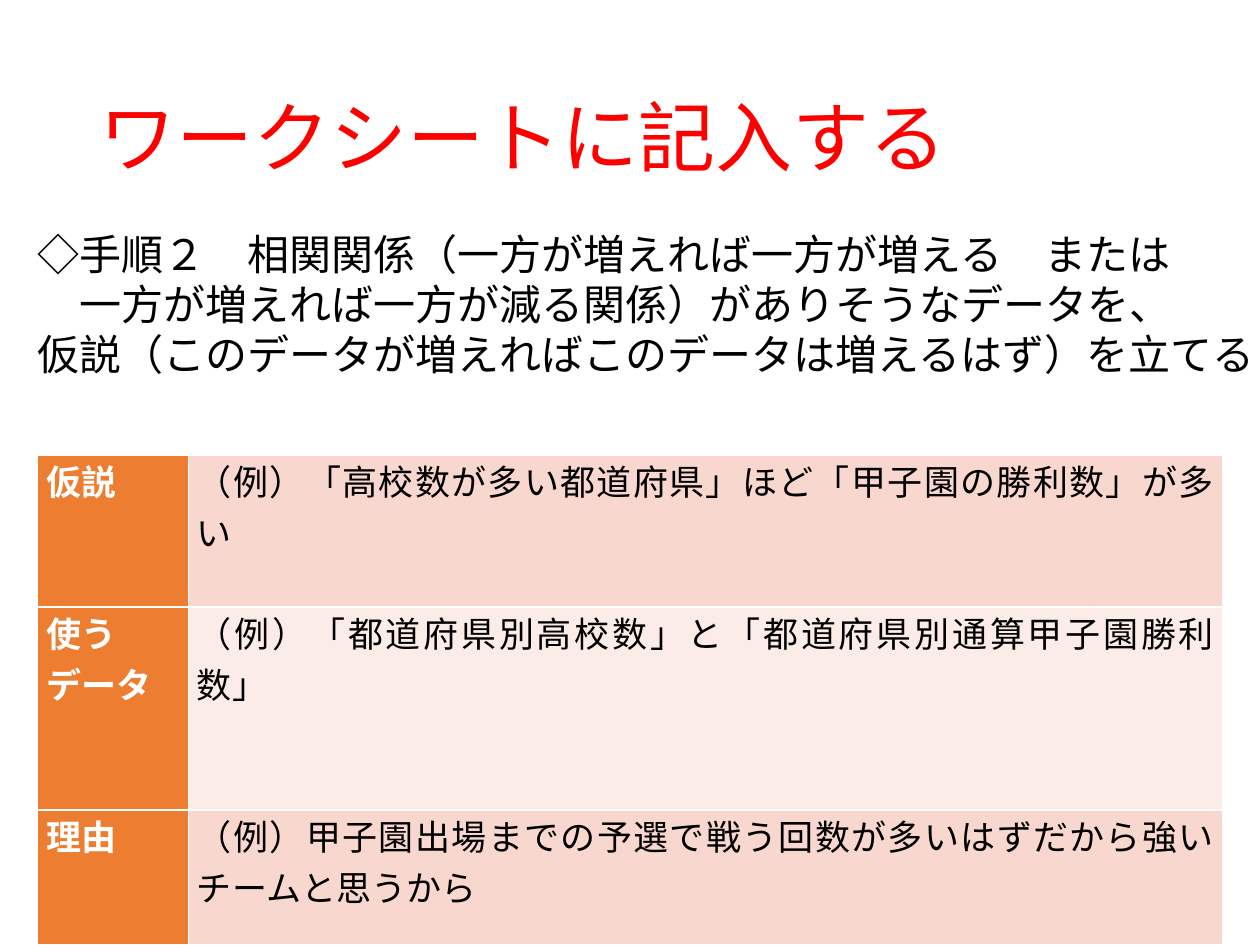
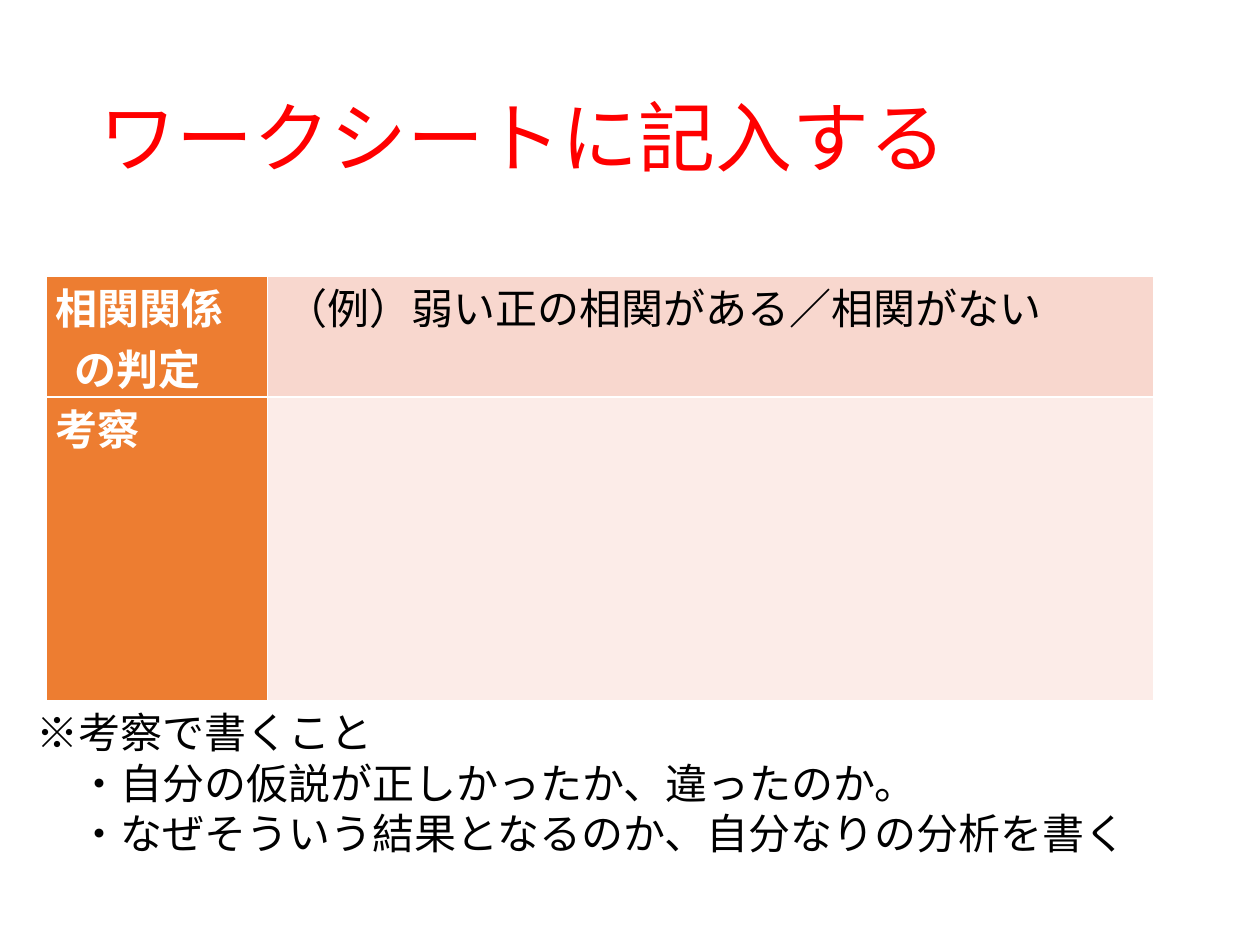
from dataclasses import dataclass
from lxml.etree import SubElement
from pptx import Presentation
from pptx.dml.color import RGBColor
from pptx.enum.text import MSO_ANCHOR, PP_ALIGN
from pptx.oxml.ns import qn
from pptx.util import Pt


@dataclass(frozen=True)
class Theme:
    font: str = "Noto Sans CJK JP"
    title_color: str = "FF0000"
    text_color: str = "000000"
    label_color: str = "FFFFFF"
    border_color: str = "FFFFFF"
    label_fill: str = "ED7D31"
    band_fills: tuple = ("F8D7CE", "FCECE8")
    title_size: int = 44
    body_size: int = 24
    small_size: int = 20
    body_spacing: float = 28.8


@dataclass(frozen=True)
class Line:
    text: str
    indent: float = 0


THEME = Theme()


def style_paragraph(paragraph, size, color, bold=False, indent=0):
    font = paragraph.font
    font.size = Pt(size)
    font.bold = bold
    font.color.rgb = RGBColor.from_string(color)
    font.name = THEME.font
    properties = paragraph._p.get_or_add_pPr()
    SubElement(properties.find(qn("a:defRPr")), qn("a:ea"), typeface=THEME.font)
    properties.set("marL", "0")
    properties.set("indent", str(Pt(indent)))


def add_lines(frame, lines, size, color, bold=False):
    """Write one paragraph per line and return the paragraphs."""
    for number, line in enumerate(lines):
        paragraph = frame.add_paragraph() if number else frame.paragraphs[0]
        paragraph.text = line.text
        style_paragraph(paragraph, size, color, bold, line.indent)
    return frame.paragraphs


def add_text_box(slide, left, top, width, height):
    box = slide.shapes.add_textbox(Pt(left), Pt(top), Pt(width), Pt(height))
    box.text_frame.word_wrap = True
    return box.text_frame


def add_title(slide, text):
    frame = add_text_box(slide, 49.7, 28.8, 620.6, 104.4)
    frame.vertical_anchor = MSO_ANCHOR.MIDDLE
    title, = add_lines(frame, [Line(text)], THEME.title_size, THEME.title_color)
    title.line_spacing = 0.9


def add_explanation(slide, left, top, width, indent, texts):
    frame = add_text_box(slide, left, top, width, 94.3)
    frame.margin_top = Pt(5)
    lines = [Line(text, indent) for text in texts]
    for paragraph in add_lines(frame, lines, THEME.body_size, THEME.text_color):
        paragraph.line_spacing = Pt(THEME.body_spacing)


def add_borders(cell):
    properties = cell._tc.get_or_add_tcPr()
    for side in ("lnL", "lnR", "lnT", "lnB"):
        border = SubElement(properties, qn(f"a:{side}"), w=str(Pt(1)))
        fill = SubElement(border, qn("a:solidFill"))
        SubElement(fill, qn("a:srgbClr"), val=THEME.border_color)


def fill_cell(cell, lines, size, fill, color, bold):
    add_borders(cell)
    cell.fill.solid()
    cell.fill.fore_color.rgb = RGBColor.from_string(fill)
    cell.margin_left = cell.margin_right = Pt(5)
    cell.margin_top = cell.margin_bottom = 0
    for paragraph in add_lines(cell.text_frame, lines, size, color, bold):
        paragraph.alignment = PP_ALIGN.JUSTIFY


def add_worksheet(slide, left, top, widths, heights, size, rows):
    """Add a table with a bold label column and banded answers."""
    table = slide.shapes.add_table(
        len(rows), 2, Pt(left), Pt(top), Pt(sum(widths)), Pt(sum(heights))
    ).table
    table.first_row = table.horz_banding = False
    for column, width in zip(table.columns, widths):
        column.width = Pt(width)
    for number, (label, answer) in enumerate(rows):
        table.rows[number].height = Pt(heights[number])
        band = THEME.band_fills[number % 2]
        fill_cell(table.cell(number, 0), label, size,
                  THEME.label_fill, THEME.label_color, True)
        fill_cell(table.cell(number, 1), answer, size,
                  band, THEME.text_color, False)


def add_worksheet_slide(presentation):
    slide = presentation.slides.add_slide(presentation.slide_layouts[6])
    add_title(slide, "ワークシートに記入する")
    return slide


def add_hypothesis_slide(presentation):
    slide = add_worksheet_slide(presentation)
    add_worksheet(
        slide, 21.4, 260, (86.2, 591), (86.8, 116, 77), THEME.small_size,
        [
            ([Line("仮説")],
             [Line("（例）「高校数が多い都道府県」ほど「甲子園の勝利数」が多い")]),
            ([Line("使う"), Line("データ")],
             [Line("（例）「都道府県別高校数」と「都道府県別通算甲子園勝利数」")]),
            ([Line("理由")],
             [Line("（例）甲子園出場までの予選で戦う回数が多いはずだから強いチームと思うから")]),
        ],
    )
    add_explanation(slide, -49, 125.3, 781.2, 63.4, [
        "◇手順２　相関関係（一方が増えれば一方が増える　または",
        "　一方が増えれば一方が減る関係）がありそうなデータを、",
        "仮説（このデータが増えればこのデータは増えるはず）を立てる",
    ])


def add_judgement_slide(presentation):
    slide = add_worksheet_slide(presentation)
    add_worksheet(
        slide, 26.6, 157.7, (126.4, 506.2), (69.2, 173.6), THEME.body_size,
        [
            ([Line("相関関係"), Line("の判定", 10.8)],
             [Line("（例）弱い正の相関がある／相関がない", 5.4)]),
            ([Line("考察")], []),
        ],
    )
    add_explanation(slide, -28.1, 398.9, 686.9, 41.8, [
        "※考察で書くこと",
        "　・自分の仮説が正しかったか、違ったのか。",
        "　・なぜそういう結果となるのか、自分なりの分析を書く",
    ])


def main():
    presentation = Presentation()
    presentation.slide_width = Pt(720)
    presentation.slide_height = Pt(540)
    add_hypothesis_slide(presentation)
    add_judgement_slide(presentation)
    presentation.save("out.pptx")


if __name__ == "__main__":
    main()
